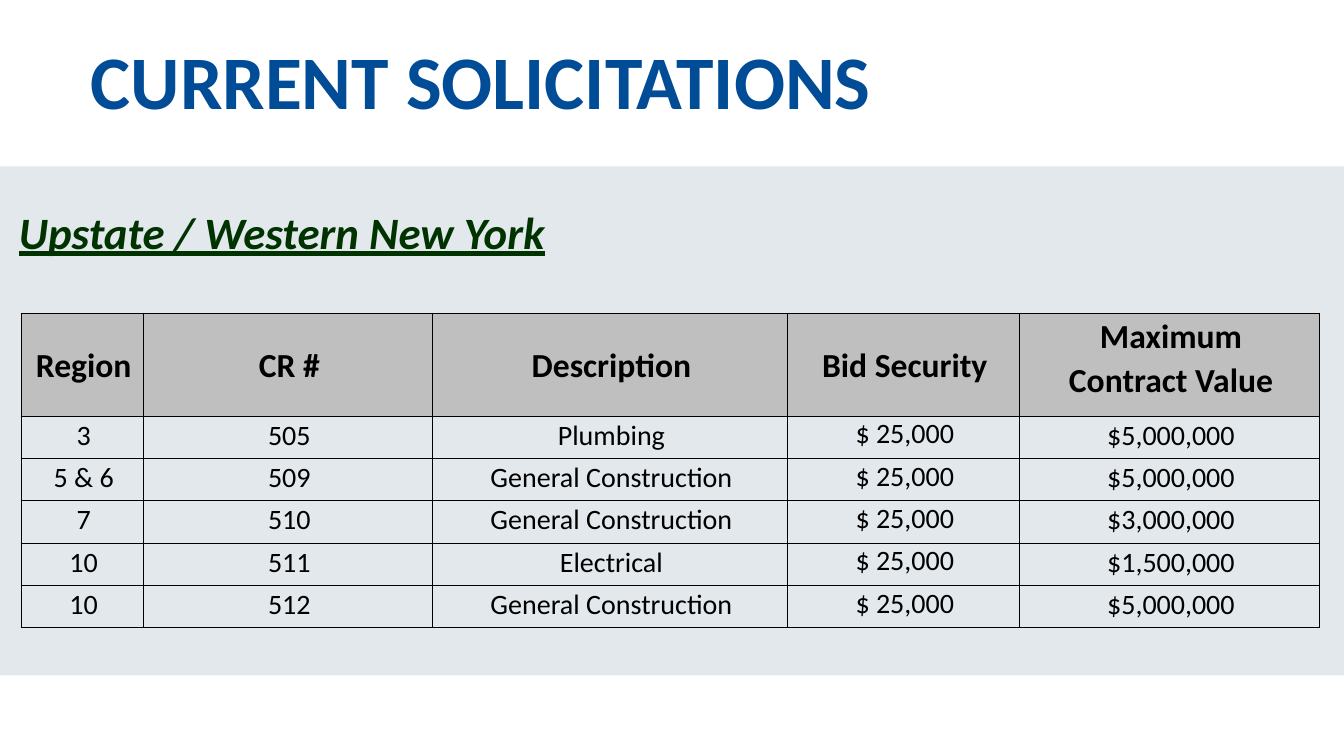
from dataclasses import dataclass

from lxml.etree import SubElement
from pptx import Presentation
from pptx.dml.color import RGBColor
from pptx.enum.shapes import MSO_SHAPE as Shape
from pptx.enum.text import MSO_ANCHOR as Anchor, MSO_AUTO_SIZE as AutoSize, PP_ALIGN as Align
from pptx.oxml import parse_xml
from pptx.oxml.ns import nsdecls, qn
from pptx.util import Inches, Pt

TITLE = "CURRENT SOLICITATIONS"
REGION = "Upstate / Western New York"
HEADERS = ["Region", "CR #", "Description", "Bid Security", "Maximum\nContract Value"]
BID_SECURITY = "$ 25,000"
SOLICITATIONS = [
    ("3", "505", "Plumbing", BID_SECURITY, "$5,000,000"),
    ("5 & 6", "509", "General Construction", BID_SECURITY, "$5,000,000"),
    ("7", "510", "General Construction", BID_SECURITY, "$3,000,000"),
    ("10", "511", "Electrical", BID_SECURITY, "$1,500,000"),
    ("10", "512", "General Construction", BID_SECURITY, "$5,000,000"),
]
WIDTH, HEIGHT = 13.33, 7.5
COLUMNS = [1.21, 2.87, 3.52, 2.3, 2.98]
HEADER_ROW, BODY_ROW = 1.02, 0.42


@dataclass(frozen=True)
class Theme:
    font: str = "Calibri"
    title: str = "004C97"
    region: str = "003300"
    text: str = "000000"
    header: str = "BFBFBF"
    band: str = "BFCED6"
    band_alpha: int = 45
    title_size: int = 54
    region_size: int = 32
    header_size: int = 24
    body_size: int = 20
    border: int = 1


THEME = Theme()


def place(*lengths):
    return [Inches(length) for length in lengths]


def style(para, size, color, spacing, align=Align.LEFT, bold=True):
    para.alignment = align
    para.line_spacing = spacing
    font = para.font
    font.name, font.size, font.bold = THEME.font, Pt(size), bold
    font.color.rgb = RGBColor.from_string(color)


def add_band(page):
    band = page.shapes.add_shape(Shape.RECTANGLE, *place(0, 0.22 * HEIGHT, WIDTH, 5.05))
    band.shadow.inherit = False
    band.line.fill.background()
    band.fill.solid()
    band.fill.fore_color.rgb = RGBColor.from_string(THEME.band)
    color = band.fill._xPr.find(qn("a:solidFill"))[0]
    SubElement(color, qn("a:alpha")).set("val", str(THEME.band_alpha * 1000))


def add_title(page):
    title = page.shapes.title
    title.left, title.top, title.width, title.height = place(0.8, 0.22, 11.68, 1.25)
    frame = title.text_frame
    frame.text = TITLE
    frame.auto_size, frame.vertical_anchor = AutoSize.NONE, Anchor.MIDDLE
    style(frame.paragraphs[0], THEME.title_size, THEME.title, 0.9)


def add_region(page):
    frame = page.shapes.add_textbox(*place(0.09, 2.07, 5.67, 0.49)).text_frame
    frame.word_wrap, frame.vertical_anchor = True, Anchor.MIDDLE
    frame.text = REGION
    para = frame.paragraphs[0]
    style(para, THEME.region_size, THEME.region, 0.97)
    para.font.italic = para.font.underline = True


def add_borders(cell):
    properties = cell._tc.get_or_add_tcPr()
    for position, side in enumerate(("lnL", "lnR", "lnT", "lnB")):
        properties.insert(position, parse_xml(
            f'<a:{side} {nsdecls("a")} w="{Pt(THEME.border)}"><a:solidFill>'
            f'<a:srgbClr val="{THEME.text}"/></a:solidFill></a:{side}>'))


def fill_cell(cell, text, row, column):
    is_header, is_bid = row == 0, HEADERS[column] == "Bid Security"
    cell.margin_left, cell.margin_right = place(0.1, 0.07)
    cell.margin_top = cell.margin_bottom = 0
    cell.vertical_anchor = Anchor.MIDDLE if is_header and "\n" not in text else Anchor.TOP
    cell.text = text
    for para in cell.text_frame.paragraphs:
        style(para, THEME.header_size if is_header else THEME.body_size, THEME.text,
              1.03 if is_bid and not is_header else 1.07, Align.CENTER, is_header)
    if is_header:
        cell.fill.solid()
        cell.fill.fore_color.rgb = RGBColor.from_string(THEME.header)
    else:
        cell.fill.background()
    add_borders(cell)


def add_solicitations(page):
    rows = [HEADERS, *SOLICITATIONS]
    heights = [HEADER_ROW] + [BODY_ROW] * len(SOLICITATIONS)
    table = page.shapes.add_table(
        len(rows), len(COLUMNS), *place(0.21, 3.11, sum(COLUMNS), sum(heights))).table
    table.first_row = table.horz_banding = False
    for column, width in zip(table.columns, COLUMNS):
        column.width = Inches(width)
    for row, height in zip(table.rows, heights):
        row.height = Inches(height)
    for row, values in enumerate(rows):
        for column, text in enumerate(values):
            fill_cell(table.cell(row, column), text, row, column)


def main():
    deck = Presentation()
    deck.slide_width, deck.slide_height = place(WIDTH, HEIGHT)
    page = deck.slides.add_slide(deck.slide_layouts.get_by_name("Title Only"))
    add_band(page)
    add_title(page)
    add_region(page)
    add_solicitations(page)
    deck.save("out.pptx")


if __name__ == "__main__":
    main()
